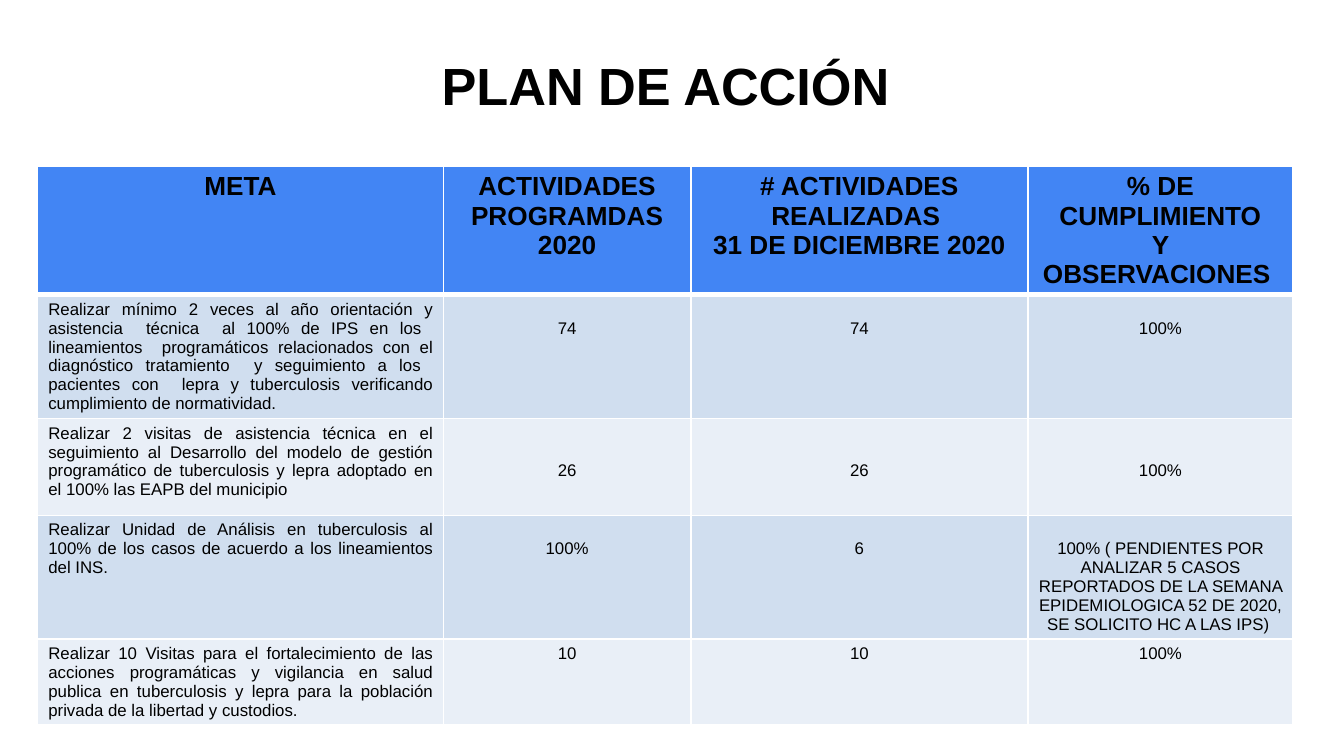
import pptx
import pptx.dml.color
import pptx.enum.text
import pptx.oxml
import pptx.oxml.ns
import pptx.util

Inches = pptx.util.Inches
Pt = pptx.util.Pt
ALIGN = pptx.enum.text.PP_ALIGN
ANCHOR = pptx.enum.text.MSO_ANCHOR

SLIDE_WIDTH = 10
SLIDE_HEIGHT = SLIDE_WIDTH * 9 / 16
FONT = "Arial"
BLACK, WHITE = "000000", "FFFFFF"
HEADER_FILL = "4285F4"
BAND_FILLS = ("D0DEEF", "E9EFF7")
BODY_LINE = 0.14  # height of one 9 pt line, in inches

COLUMN_WIDTHS = (3.02, 1.84, 2.51, 1.97)
HEADER_HEIGHT = 0.6
HEADERS = (
    ("META",),
    ("ACTIVIDADES PROGRAMDAS 2020",),
    ("# ACTIVIDADES REALIZADAS ", "31 DE DICIEMBRE 2020"),
    ("% DE CUMPLIMIENTO", "Y OBSERVACIONES "),
)
# Row height, lines left free above the results, goal, results
GOALS = (
    (0.52, 1,
     "Realizar mínimo 2 veces al año orientación y asistencia  técnica  al 100% de IPS "
     "en los  lineamientos  programáticos relacionados con el diagnóstico tratamiento  y "
     "seguimiento a los  pacientes con  lepra y tuberculosis verificando cumplimiento de "
     "normatividad.",
     ("74", "74", "100%")),
    (0.72, 2,
     "Realizar 2 visitas de asistencia técnica en el seguimiento al Desarrollo del modelo "
     "de gestión programático de tuberculosis y lepra adoptado en el 100% las EAPB del "
     "municipio",
     ("26", "26", "100%")),
    (0.53, 1,
     "Realizar Unidad de Análisis en tuberculosis al 100% de los casos de acuerdo a los "
     "lineamientos del INS.",
     ("100%", "6",
      "100% ( PENDIENTES POR ANALIZAR 5 CASOS REPORTADOS DE LA SEMANA EPIDEMIOLOGICA 52 "
      "DE 2020, SE SOLICITO HC A LAS IPS) ")),
    (0.26, 0,
     "Realizar 10 Visitas para el fortalecimiento de las acciones programáticas y "
     "vigilancia en salud publica en tuberculosis y lepra para la población privada de "
     "la libertad y custodios.",
     ("10", "10", "100%")),
)


def color(hex_value):
    return pptx.dml.color.RGBColor.from_string(hex_value)


def add_run(paragraph, text, size, bold):
    run = paragraph.add_run()
    run.text = text
    run.font.name = FONT
    run.font.size = Pt(size)
    run.font.bold = bold
    run.font.color.rgb = color(BLACK)


def set_margins(target, side, top, bottom=0.04):
    target.margin_left = target.margin_right = Inches(side)
    target.margin_top = Inches(top)
    target.margin_bottom = Inches(bottom)


def set_borders(cell, top=1, bottom=1):
    properties = cell._tc.get_or_add_tcPr()
    widths = {"lnL": 1, "lnR": 1, "lnT": top, "lnB": bottom}
    for position, (side, width) in enumerate(widths.items()):
        border = pptx.oxml.parse_xml(
            f'<a:{side} {pptx.oxml.ns.nsdecls("a")} w="{Pt(width)}">'
            f'<a:solidFill><a:srgbClr val="{WHITE}"/></a:solidFill></a:{side}>')
        properties.insert(position, border)


def fill_cell(cell, lines, size, bold, align, fill, free_lines=0):
    set_margins(cell, 0.08, 0.04 + free_lines * BODY_LINE)
    cell.vertical_anchor = ANCHOR.TOP
    cell.fill.solid()
    cell.fill.fore_color.rgb = color(fill)
    frame = cell.text_frame
    for index, line in enumerate(lines):
        paragraph = frame.add_paragraph() if index else frame.paragraphs[0]
        paragraph.alignment = align
        add_run(paragraph, line, size, bold)


def place_title(slide, left, top, width, height):
    title = slide.shapes.title
    title.left, title.top = Inches(left), Inches(top)
    title.width, title.height = Inches(width), Inches(height)
    frame = title.text_frame
    frame.word_wrap = True
    frame.auto_size = pptx.enum.text.MSO_AUTO_SIZE.NONE
    frame.vertical_anchor = ANCHOR.MIDDLE
    set_margins(frame, 0.07, 0.04)
    paragraph = frame.paragraphs[0]
    paragraph.alignment = ALIGN.CENTER
    paragraph.line_spacing = 0.9
    add_run(paragraph, "PLAN DE ACCIÓN ", 28, True)


def place_plan(slide, left, top, width, height):
    plan = slide.shapes.add_table(
        len(GOALS) + 1, len(COLUMN_WIDTHS),
        Inches(left), Inches(top), Inches(width), Inches(height)).table
    for column, share in zip(plan.columns, COLUMN_WIDTHS):
        column.width = Inches(width * share / sum(COLUMN_WIDTHS))

    # Header row
    plan.rows[0].height = Inches(HEADER_HEIGHT)
    for column, lines in enumerate(HEADERS):
        cell = plan.cell(0, column)
        fill_cell(cell, lines, 14, True, ALIGN.CENTER, HEADER_FILL)
        set_borders(cell, bottom=3)

    # One row per goal, in alternating bands
    for row, (row_height, free_lines, goal, results) in enumerate(GOALS, 1):
        plan.rows[row].height = Inches(row_height)
        fill = BAND_FILLS[(row - 1) % 2]
        fill_cell(plan.cell(row, 0), [goal], 9, False, ALIGN.JUSTIFY, fill)
        for column, result in enumerate(results, 1):
            fill_cell(plan.cell(row, column), [result], 9, False,
                      ALIGN.CENTER, fill, free_lines)
        for column in range(len(COLUMN_WIDTHS)):
            set_borders(plan.cell(row, column), top=3 if row == 1 else 1)


def main():
    presentation = pptx.Presentation()
    presentation.slide_width = Inches(SLIDE_WIDTH)
    presentation.slide_height = Inches(SLIDE_HEIGHT)
    slide = presentation.slides.add_slide(presentation.slide_layouts[5])
    slide.background.fill.solid()
    slide.background.fill.fore_color.rgb = color(WHITE)
    place_title(slide, 1.77, 0.25, 6.47, 0.82)
    place_plan(slide, 0.28, 1.24, 9.34, 3.65)
    presentation.save("out.pptx")


if __name__ == "__main__":
    main()
